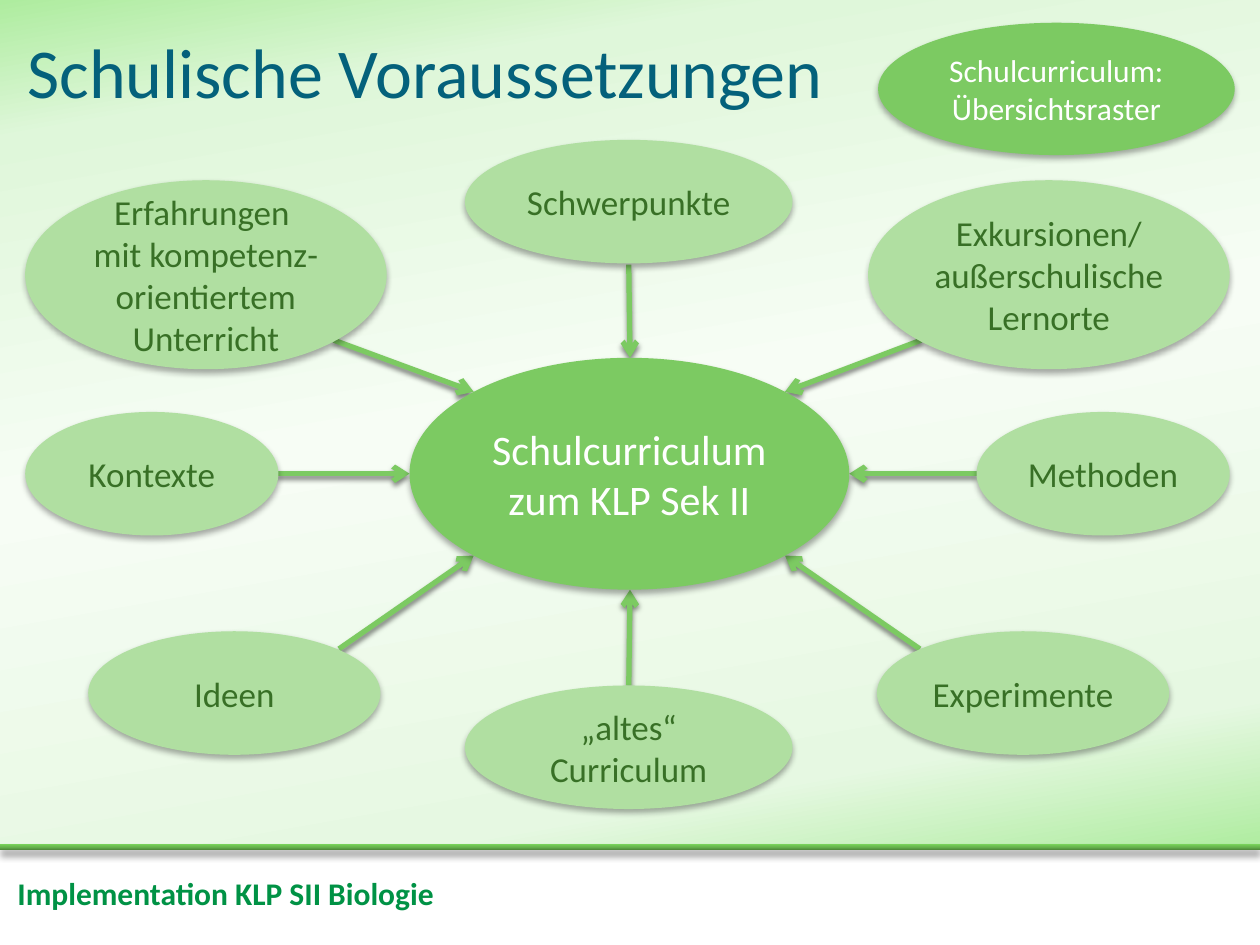
"""Build the slide on the preconditions for a school curriculum."""
import lxml.etree
import pptx
import pptx.dml.color
import pptx.enum.shapes
import pptx.enum.text
import pptx.oxml.ns
import pptx.util

Pt = pptx.util.Pt
RGBColor = pptx.dml.color.RGBColor
SHAPES = pptx.enum.shapes.MSO_SHAPE
qn = pptx.oxml.ns.qn

GREEN = RGBColor(0x7C, 0xCA, 0x62)
PALE_GREEN = RGBColor(0xB0, 0xDF, 0xA1)
DARK_GREEN = RGBColor(0x38, 0x70, 0x26)
FOOTER_GREEN = RGBColor(0x00, 0x92, 0x45)
TITLE_BLUE = RGBColor(0x04, 0x61, 0x7B)
WHITE = RGBColor(0xFF, 0xFF, 0xFF)
BLACK = RGBColor(0x00, 0x00, 0x00)
PANEL_STOPS = [
    (0, RGBColor(0xAE, 0xEC, 0x9F)),
    (14, RGBColor(0xE6, 0xF8, 0xE2)),
    (53, RGBColor(0xF7, 0xFD, 0xF5)),
    (87, RGBColor(0xDF, 0xF7, 0xDA)),
    (100, RGBColor(0xAE, 0xEC, 0x9F)),
]
BAR_STOPS = [
    (0, RGBColor(0x47, 0x7C, 0x35)),
    (50, RGBColor(0x65, 0xB1, 0x4C)),
    (100, RGBColor(0x78, 0xD2, 0x5A)),
]


def cast_shadow(shape, opacity, blur, distance):
    properties = shape._element.spPr
    effects = properties.find(qn("a:effectLst"))
    if effects is None:
        effects = lxml.etree.SubElement(properties, qn("a:effectLst"))
    shadow = lxml.etree.SubElement(
        effects, qn("a:outerShdw"), blurRad=str(Pt(blur)), dist=str(Pt(distance)),
        dir="5400000", rotWithShape="0")
    color = lxml.etree.SubElement(shadow, qn("a:srgbClr"), val=str(BLACK))
    lxml.etree.SubElement(color, qn("a:alpha"), val=str(opacity * 1000))


def write(shape, text, size, color, bold=False):
    frame = shape.text_frame
    frame.text = text
    frame.word_wrap = True
    for span in frame.paragraphs[0].runs:
        span.font.name = "Calibri"
        span.font.size = Pt(size)
        span.font.color.rgb = color
        span.font.bold = bold


deck = pptx.Presentation()
deck.slide_width, deck.slide_height = Pt(720), Pt(540)
page = deck.slides.add_slide(deck.slide_layouts[6])

bands = [(0, 485.3, PANEL_STOPS, 100), (482.4, 3.6, BAR_STOPS, 90)]
for top, height, stops, angle in bands:
    band = page.shapes.add_shape(SHAPES.RECTANGLE, Pt(0), Pt(top), Pt(720), Pt(height))
    band.line.fill.background()
    band.shadow.inherit = False
    band.fill.gradient()
    band.fill.gradient_angle = angle
    stop_list = band._element.spPr.find(qn("a:gradFill")).find(qn("a:gsLst"))
    for old_stop in list(stop_list):
        stop_list.remove(old_stop)
    for position, color in stops:
        stop = lxml.etree.SubElement(stop_list, qn("a:gs"), pos=str(position * 1000))
        lxml.etree.SubElement(stop, qn("a:srgbClr"), val=str(color))
cast_shadow(band, 40, 4, 3)

footer = page.shapes.add_textbox(Pt(2.9), Pt(496), Pt(345.6), Pt(28.8))
write(footer, "Implementation KLP SII Biologie", 18, FOOTER_GREEN, bold=True)
footer.text_frame.vertical_anchor = pptx.enum.text.MSO_ANCHOR.MIDDLE
footer.text_frame.auto_size = pptx.enum.text.MSO_AUTO_SIZE.SHAPE_TO_FIT_TEXT

arrows = [
    (359.3, 151.2, 360, 204.5),
    (158.4, 270.7, 234, 270.7),
    (526.3, 194.4, 448.6, 223.9),
    (558, 270.7, 485.3, 270.7),
    (190.8, 194.4, 270.7, 223.9),
    (359.3, 391.7, 360, 337),
    (193.7, 370.8, 270.7, 317.5),
    (525.6, 370.8, 448.6, 317.5),
]
for ends in arrows:
    arrow = page.shapes.add_connector(
        pptx.enum.shapes.MSO_CONNECTOR.STRAIGHT, *map(Pt, ends))
    arrow.line.color.rgb = GREEN
    arrow.line.width = Pt(3)
    lxml.etree.SubElement(arrow.line._get_or_add_ln(), qn("a:tailEnd"), type="arrow")
    cast_shadow(arrow, 50, 3, 2)

ellipses = [
    ("Schulcurriculum: Übersichtsraster", 501.8, 13, 203.8, 75.6, 18, GREEN, WHITE),
    ("Schulcurriculum zum KLP Sek II", 234, 204.5, 251.3, 132.5, 24, GREEN, WHITE),
]
topics = [
    ("Schwerpunkte", 265.7, 79.9, 187.2, 70.6),
    ("Methoden", 558, 235.4, 144.7, 70.6),
    ("Kontexte", 14.4, 235.4, 144.7, 70.6),
    ("Erfahrungen \vmit kompetenz-orientiertem Unterricht", 14.4, 103, 206.6, 108),
    ("Exkursionen/\vaußerschulische Lernorte", 496.1, 103, 206.6, 108),
    ("„altes“ Curriculum", 265.7, 391.7, 187.2, 70.6),
    ("Ideen", 50.4, 360.7, 167, 70.6),
    ("Experimente", 501.1, 360.7, 167, 70.6),
]
ellipses += [(*topic, 20, PALE_GREEN, DARK_GREEN) for topic in topics]
for text, left, top, width, height, size, fill, color in ellipses:
    ellipse = page.shapes.add_shape(SHAPES.OVAL, Pt(left), Pt(top), Pt(width), Pt(height))
    ellipse.fill.solid()
    ellipse.fill.fore_color.rgb = fill
    ellipse.line.fill.background()
    ellipse.shadow.inherit = False
    cast_shadow(ellipse, 32, 3.5, 2.2)
    write(ellipse, text, size, color)
    ellipse.text_frame.vertical_anchor = pptx.enum.text.MSO_ANCHOR.MIDDLE
    ellipse.text_frame.paragraphs[0].alignment = pptx.enum.text.PP_ALIGN.CENTER

title = page.shapes.add_textbox(Pt(8.6), Pt(13), Pt(612), Pt(90))
write(title, "Schulische Voraussetzungen", 40, TITLE_BLUE)

deck.save("out.pptx")
